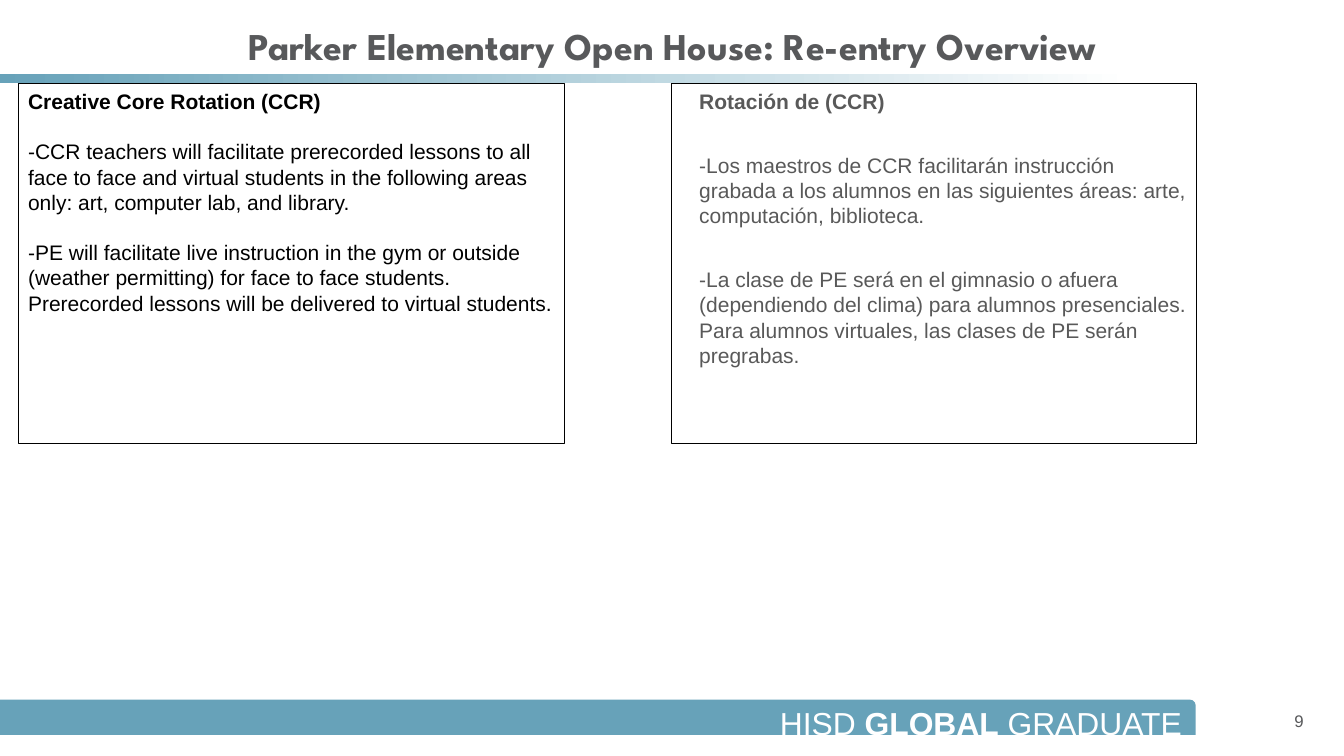
from pptx import Presentation
from pptx.dml.color import RGBColor
from pptx.enum.shapes import MSO_SHAPE
from pptx.enum.text import MSO_ANCHOR, PP_ALIGN
from pptx.util import Inches, Pt

COLORS = {"teal": "67A2B9", "white": "FFFFFF", "black": "000000",
          "title": "58595B", "body": "595959"}
W, H = 13.33, 7.5
PANEL_TOP, PANEL_H = 0.83, 3.57

ENGLISH = [
    "Creative Core Rotation (CCR)",
    "-CCR teachers will facilitate prerecorded lessons to all face to face and "
    "virtual students in the following areas only: art, computer lab, and library.",
    "-PE will facilitate live instruction in the gym or outside (weather permitting) "
    "for face to face students. Prerecorded lessons will be delivered to virtual students.",
]
SPANISH = [
    "Rotación de (CCR)",
    "-Los maestros de CCR facilitarán instrucción grabada a los alumnos en las "
    "siguientes áreas: arte, computación, biblioteca.",
    "-La clase de PE será en el gimnasio o afuera (dependiendo del clima) para alumnos "
    "presenciales. Para alumnos virtuales, las clases de PE serán pregrabas.",
]


def rgb(name):
    return RGBColor.from_string(COLORS[name])


def inches(box):
    return [Inches(v) for v in box]


def add_run(p, text, size, color, bold=False, font="Arial"):
    r = p.add_run()
    r.text = text
    r.font.name, r.font.size, r.font.bold = font, Pt(size), bold
    r.font.color.rgb = rgb(color)


def set_frame(tf, x_inset, y_inset, anchor=MSO_ANCHOR.TOP):
    tf.word_wrap = True
    tf.margin_left = tf.margin_right = Inches(x_inset)
    tf.margin_top = tf.margin_bottom = Inches(y_inset)
    tf.vertical_anchor = anchor


def add_plain_shape(s, kind, box):
    sp = s.shapes.add_shape(kind, *inches(box))
    sp.shadow.inherit = False
    sp.line.fill.background()
    return sp


def add_header(s, box):
    x, y, w, h = box
    rule = add_plain_shape(s, MSO_SHAPE.RECTANGLE, (x, y + h, 11.23, 0.09))
    rule.fill.gradient()
    rule.fill.gradient_angle = 0
    for stop, color in zip(rule.fill.gradient_stops, ("teal", "white")):
        stop.color.rgb = rgb(color)
    title = s.shapes.title
    title.left, title.top, title.width, title.height = inches((x + 0.67, y, 12, h))
    set_frame(title.text_frame, 0.1, 0.05, MSO_ANCHOR.BOTTOM)
    p = title.text_frame.paragraphs[0]
    p.alignment = PP_ALIGN.CENTER
    add_run(p, "Parker Elementary Open House: Re-entry Overview", 27, "title", True,
            "League Spartan")


def add_panel(s, box, texts, color, indent, gap):
    """Outlined box with a bold heading and spaced paragraphs."""
    sp = add_plain_shape(s, MSO_SHAPE.RECTANGLE, box)
    sp.fill.background()
    sp.line.color.rgb = rgb("black")
    sp.line.width = Pt(0.75)
    tf = sp.text_frame
    set_frame(tf, 0.1, 0.05)
    tf.margin_left = Inches(0.1 + indent)
    for i, text in enumerate(texts):
        p = tf.add_paragraph() if i else tf.paragraphs[0]
        p.alignment = PP_ALIGN.LEFT
        p.space_before = Pt(gap if i else 0)
        add_run(p, text, 15, color, bold=i == 0)


def add_right_text(s, box, insets, anchor, runs, size, color):
    tf = s.shapes.add_textbox(*inches(box)).text_frame
    set_frame(tf, *insets, anchor)
    p = tf.paragraphs[0]
    p.alignment = PP_ALIGN.RIGHT
    for text, bold in runs:
        add_run(p, text, size, color, bold)


def add_footer(s, box):
    x, y, w, h = box
    bar = add_plain_shape(s, MSO_SHAPE.ROUND_1_RECTANGLE, (x, y, 11.86, h))
    bar.fill.solid()
    bar.fill.fore_color.rgb = rgb("teal")
    add_right_text(s, (x + 5.01, y - 0.03, 6.84, 0.39), (0.13, 0.07), MSO_ANCHOR.TOP,
                   [("HISD ", False), ("GLOBAL", True), (" GRADUATE", False)],
                   22.7, "white")
    add_right_text(s, (x + w - 1.17, y + 0.01, 0.87, 0.4), (0.1, 0.05),
                   MSO_ANCHOR.MIDDLE, [("9", False)], 12, "title")


def main():
    prs = Presentation()
    prs.slide_width, prs.slide_height = Inches(W), Inches(H)
    s = prs.slides.add_slide(prs.slide_layouts[5])
    add_header(s, (0, 0.16, W, 0.57))
    add_footer(s, (0, 6.94, W, 0.35))
    add_panel(s, (0.18, PANEL_TOP, 5.42, PANEL_H), ENGLISH, "black", 0, 18)
    add_panel(s, (W / 2, PANEL_TOP, 5.2, PANEL_H), SPANISH, "body", 0.17, 27.6)
    prs.save("out.pptx")


if __name__ == "__main__":
    main()
